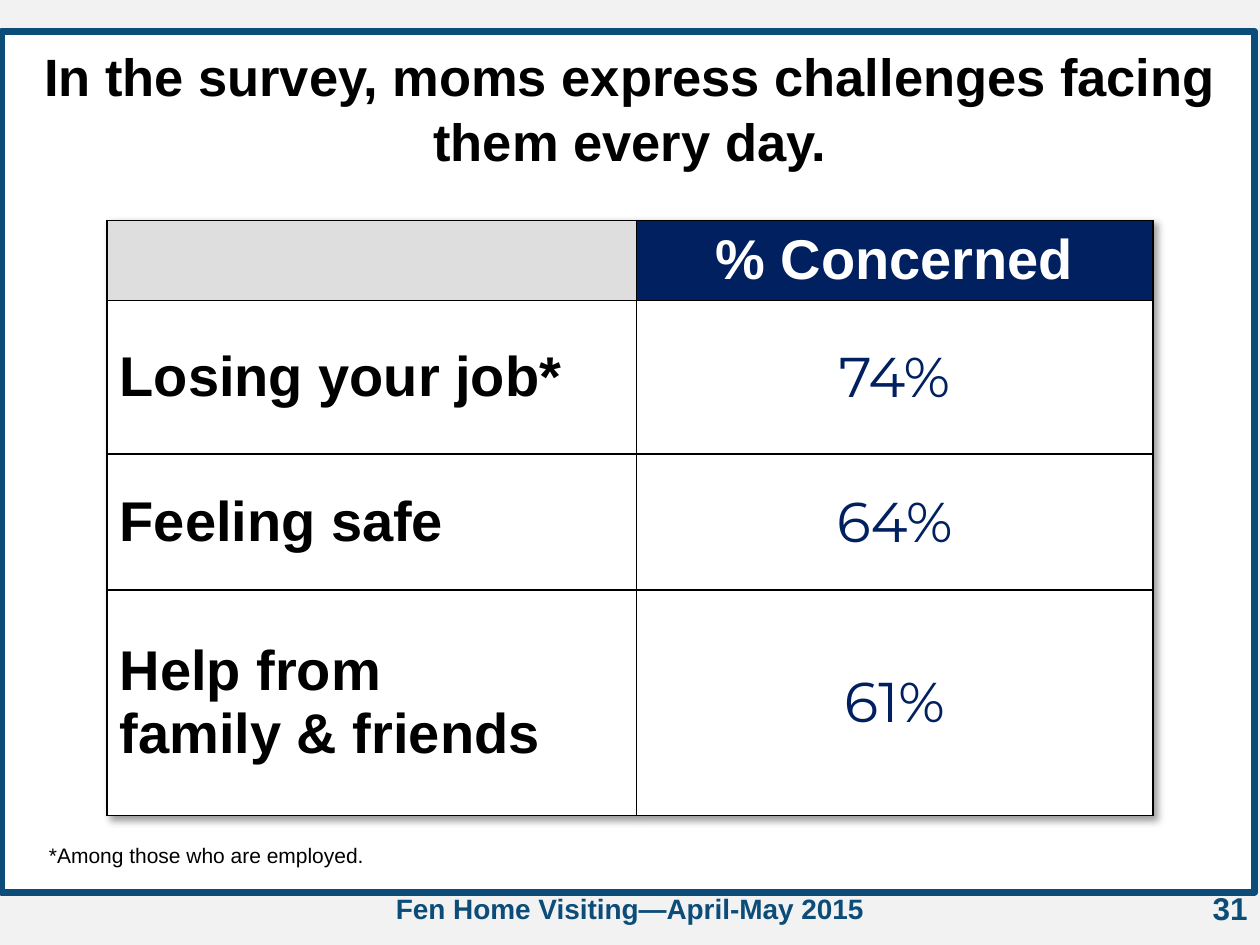
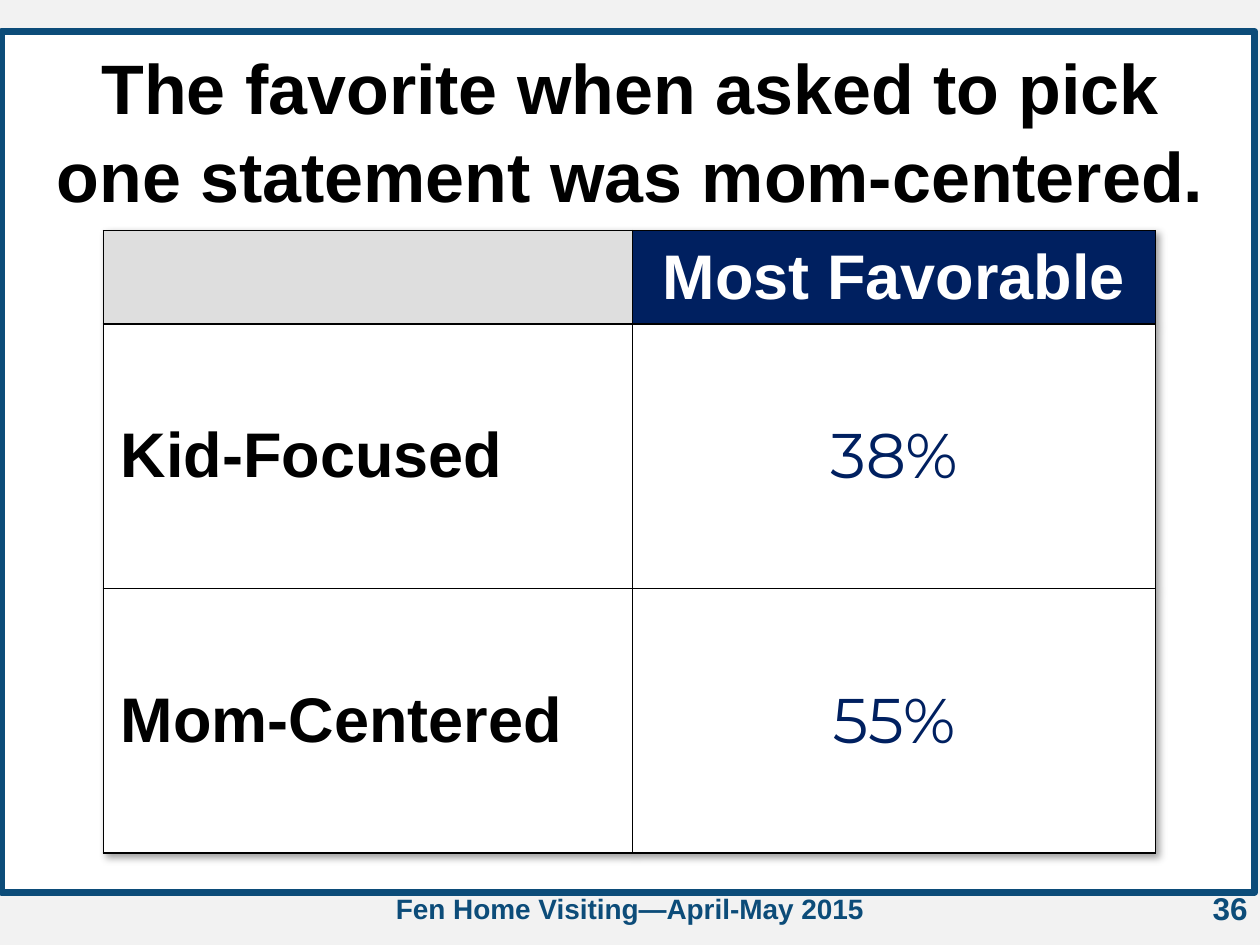
from lxml import etree
from pptx import Presentation
from pptx.dml.color import RGBColor
from pptx.enum.shapes import MSO_SHAPE
from pptx.enum.text import MSO_ANCHOR, PP_ALIGN
from pptx.oxml.ns import qn
from pptx.util import Inches, Pt

LEFT, CENTER, RIGHT = PP_ALIGN.LEFT, PP_ALIGN.CENTER, PP_ALIGN.RIGHT
MIDDLE = MSO_ANCHOR.MIDDLE
ROUNDED = MSO_SHAPE.ROUNDED_RECTANGLE

# Content
FOOTER = "Fen Home Visiting—April-May 2015"
SLIDES = [
    {
        "number": "31",
        "title": "In the survey, moms express challenges facing them every day.",
        "title_box": (0, 0.28, 10, 1.11),
        "title_size": 30,
        "table_corner": (0.85, 1.75),
        "columns": (4.2, 4.1),
        "row_heights": (0.63, 1.22, 1.08, 1.79),
        "margins": (0.1, 0.05),
        "table_size": 32,
        "heading": "% Concerned",
        "rows": [
            ("Losing your job*", "74%"),
            ("Feeling safe", "64%"),
            ("Help from\nfamily & friends", "61%"),
        ],
        "note": "*Among those who are employed.",
    },
    {
        "number": "36",
        "title": "The favorite when asked to pick one statement was mom-centered.",
        "title_box": (0.25, 0.28, 9.5, 1.45),
        "title_size": 40,
        "table_corner": (0.82, 1.83),
        "columns": (4.2, 4.15),
        "row_heights": (0.74, 2.1, 2.1),
        "margins": (0.14, 0.07),
        "table_size": 36,
        "heading": "Most Favorable",
        "rows": [("Kid-Focused", "38%"), ("Mom-Centered", "55%")],
    },
]

# Shared look
BACKGROUND, PAPER, FRAME = "F2F2F2", "FFFFFF", "0C4C79"
INK, NAVY, GREY = "000000", "002060", "DEDEDE"
FRAME_BOX = (0.01, 0.25, 9.95, 6.83)
NUMBER_BOX = (7.67, 7.01, 2.33, 0.52)
FOOTER_BOX = (2.53, 7.03, 4.94, 0.37)
NOTE_BOX = (0.29, 6.64, 8.79, 0.3)
TITLE_SPACING = 1.04
HEADING_FORMAT = {"name": "Arial", "bold": True, "color": PAPER}
LABEL_FORMAT = {"name": "Arial", "bold": True, "color": INK}
VALUE_FORMAT = {"name": "Montserrat", "bold": False, "color": NAVY}
FOOTER_FORMAT = {"name": "Arial", "bold": True, "color": FRAME}


def rgb(color):
    return RGBColor.from_string(color)


def inches(values):
    return [Inches(value) for value in values]


def fill_with(target, color):
    target.fill.solid()
    target.fill.fore_color.rgb = rgb(color)


def write(text_frame, text, size, text_format, align=LEFT, spacing=None):
    text_frame.text = text
    for paragraph in text_frame.paragraphs:
        paragraph.alignment = align
        paragraph.line_spacing = spacing
        font = paragraph.runs[0].font
        font.size = Pt(size)
        for name, value in text_format.items():
            if name == "color":
                font.color.rgb = rgb(value)
            else:
                setattr(font, name, value)


def add_text(slide, box, *text_arguments):
    text_frame = slide.shapes.add_textbox(*inches(box)).text_frame
    text_frame.word_wrap = True
    write(text_frame, *text_arguments)


def add_color(parent, color):
    return etree.SubElement(parent, qn("a:srgbClr"), val=color)


def add_borders(cell):
    properties = cell._tc.get_or_add_tcPr()
    for index, side in enumerate(("lnL", "lnR", "lnT", "lnB")):
        line = etree.Element(qn("a:" + side), w=str(Pt(1)))
        add_color(etree.SubElement(line, qn("a:solidFill")), INK)
        properties.insert(index, line)


def add_table_shadow(table):
    effects = etree.Element(qn("a:effectLst"))
    shadow = etree.SubElement(
        effects, qn("a:outerShdw"), blurRad=str(Pt(4)), dist=str(Pt(3)),
        dir="2700000", algn="tl", rotWithShape="0")
    etree.SubElement(add_color(shadow, INK), qn("a:alpha"), val="40000")
    table._tbl.tblPr.insert(0, effects)


def add_base(slide, number):
    fill_with(slide.background, BACKGROUND)
    frame = slide.shapes.add_shape(ROUNDED, *inches(FRAME_BOX))
    frame.adjustments[0] = 0
    frame.shadow.inherit = False
    fill_with(frame, PAPER)
    frame.line.color.rgb = rgb(FRAME)
    frame.line.width = Pt(4)
    add_text(slide, NUMBER_BOX, number, 18, FOOTER_FORMAT, RIGHT)
    add_text(slide, FOOTER_BOX, FOOTER, 16, FOOTER_FORMAT, CENTER)


def add_survey_table(slide, content):
    columns, heights = content["columns"], content["row_heights"]
    rows = [("", content["heading"])] + content["rows"]
    box = (*content["table_corner"], sum(columns), sum(heights))
    table = slide.shapes.add_table(len(rows), len(columns), *inches(box)).table
    table.first_row = table.horz_banding = False
    add_table_shadow(table)
    for column, width in zip(table.columns, columns):
        column.width = Inches(width)
    for row, height in zip(table.rows, heights):
        row.height = Inches(height)

    side, edge = inches(content["margins"])
    cell_format = {
        "vertical_anchor": MIDDLE, "margin_left": side, "margin_right": side,
        "margin_top": edge, "margin_bottom": edge,
    }
    for row_index, texts in enumerate(rows):
        for column_index, text in enumerate(texts):
            cell = table.cell(row_index, column_index)
            for name, value in cell_format.items():
                setattr(cell, name, value)
            is_value = column_index == 1
            if row_index == 0:
                fill, text_format = (NAVY if is_value else GREY), HEADING_FORMAT
            else:
                fill, text_format = PAPER, VALUE_FORMAT if is_value else LABEL_FORMAT
            fill_with(cell, fill)
            add_borders(cell)
            if text:
                write(cell.text_frame, text, content["table_size"], text_format,
                      CENTER if is_value else LEFT)


def main():
    presentation = Presentation()
    presentation.slide_width, presentation.slide_height = inches((10, 7.5))
    for content in SLIDES:
        slide = presentation.slides.add_slide(presentation.slide_layouts[6])
        add_base(slide, content["number"])
        add_text(slide, content["title_box"], content["title"],
                 content["title_size"], LABEL_FORMAT, CENTER, TITLE_SPACING)
        add_survey_table(slide, content)
        if "note" in content:
            add_text(slide, NOTE_BOX, content["note"], 12,
                     {**LABEL_FORMAT, "bold": False})
    presentation.save("out.pptx")


if __name__ == "__main__":
    main()
